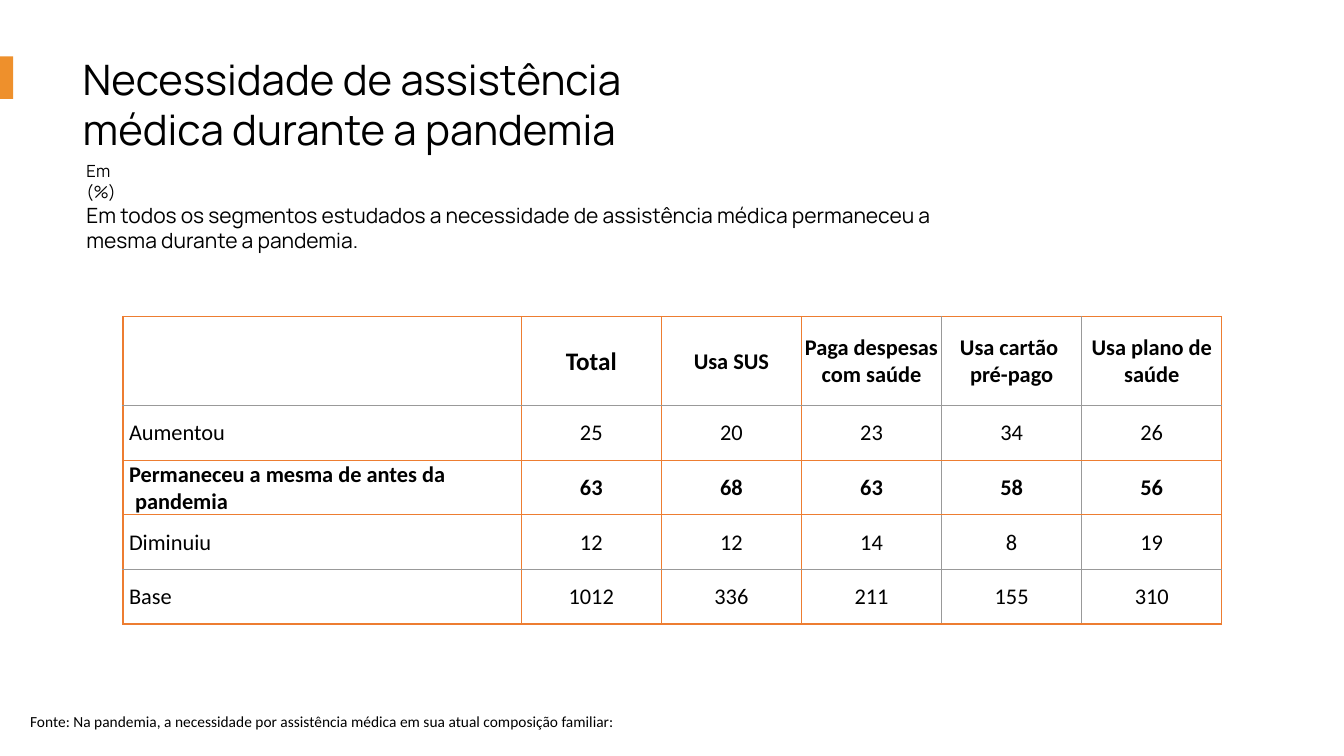
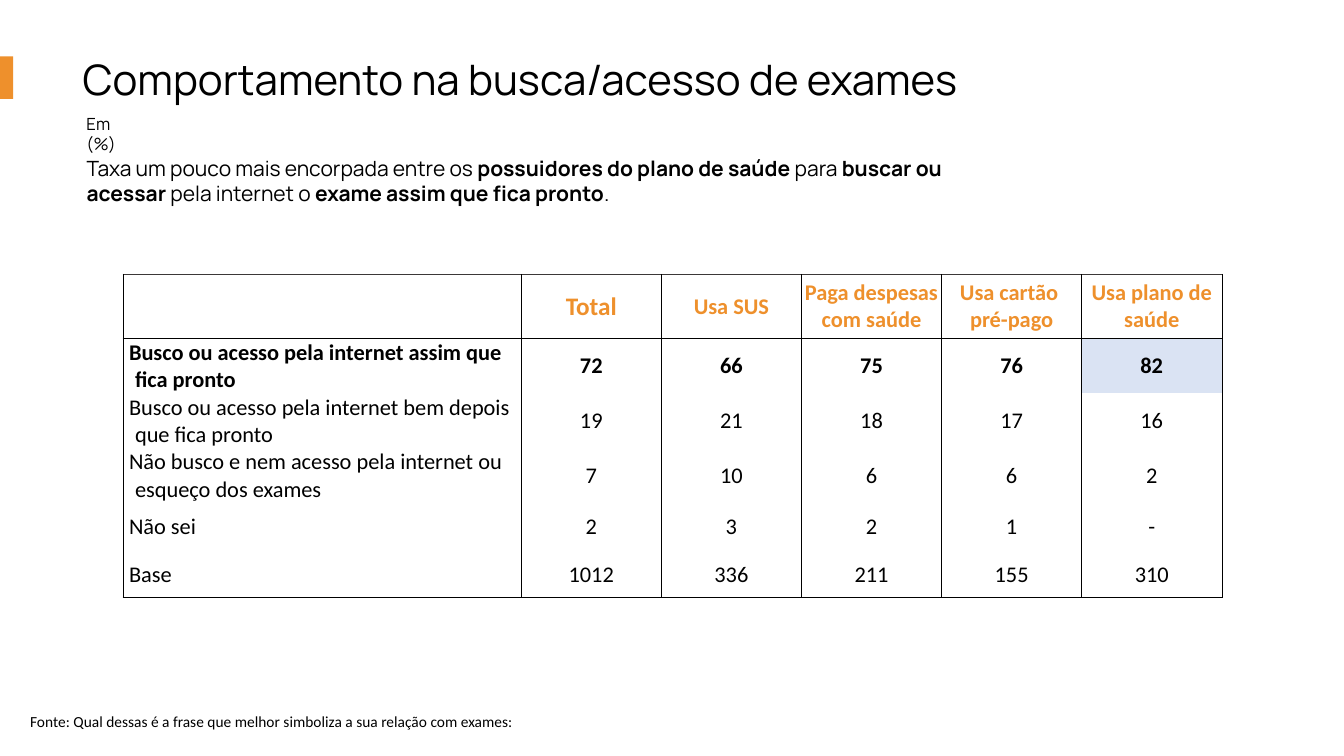
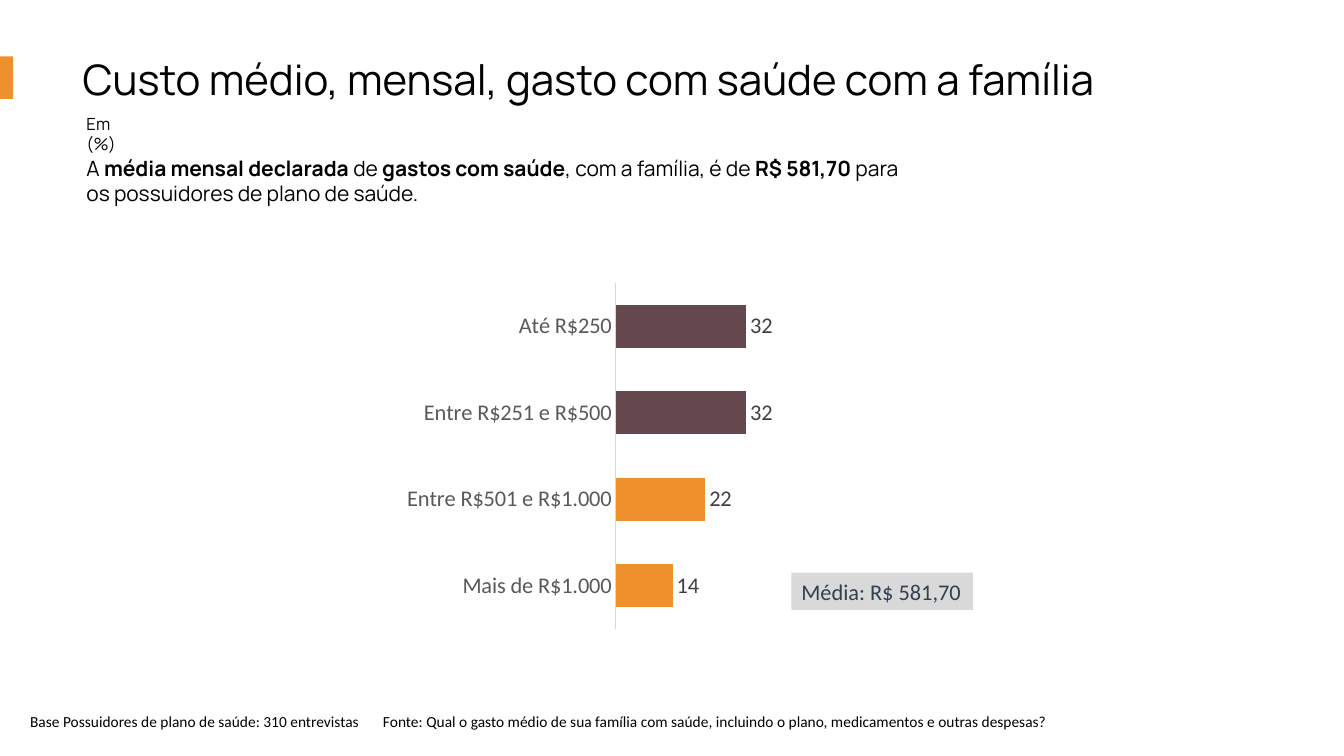
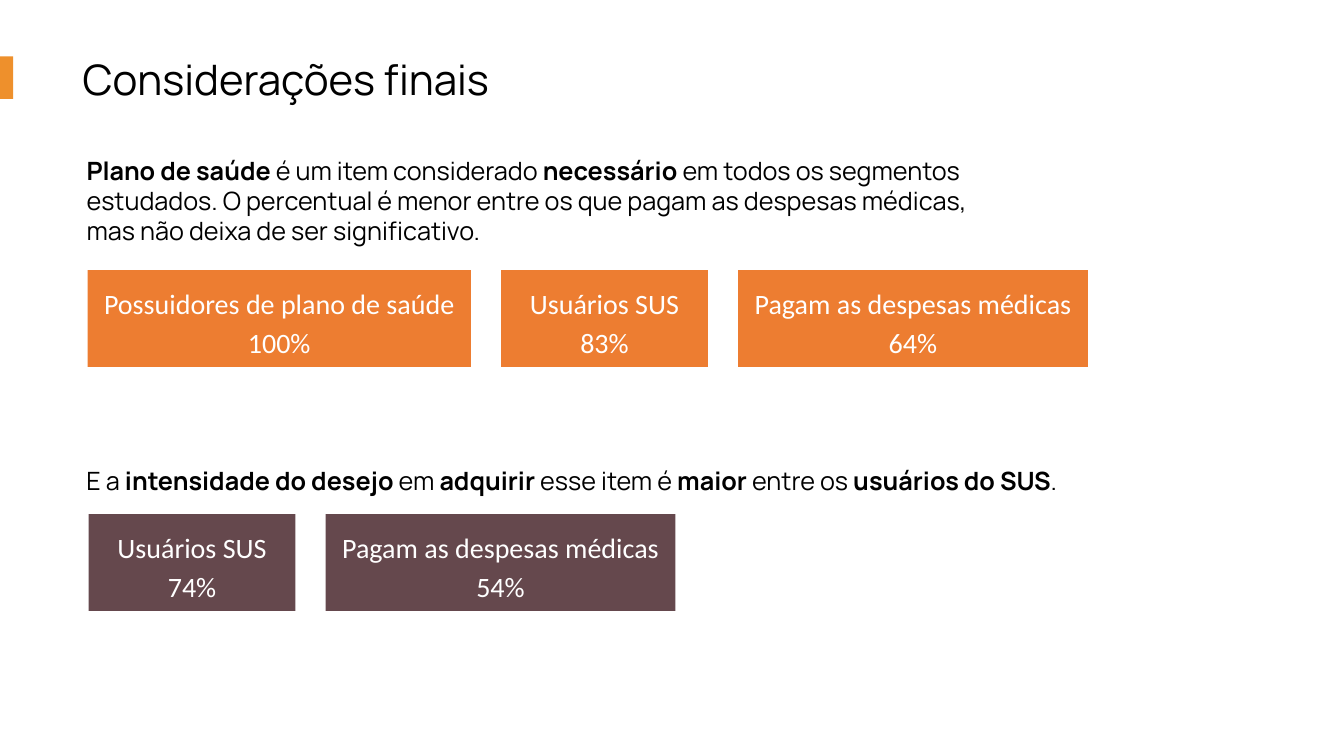
import dataclasses

import lxml.etree
import pptx
import pptx.chart.data
import pptx.dml.color
import pptx.enum.chart
import pptx.enum.shapes
import pptx.enum.text
import pptx.oxml
import pptx.oxml.ns
import pptx.util

WIDTH = pptx.util.Inches(13.33)
HEIGHT = pptx.util.Inches(7.5)
COLORS = {
    "text": "000000",
    "white": "FFFFFF",
    "accent": "EE902C",
    "orange": "ED7D31",
    "plum": "65484D",
    "highlight": "DAE3F3",
    "rule": "999999",
    "edge": "3B3838",
    "badge": "D9D9D9",
    "badge_text": "333F50",
    "axis_text": "595959",
    "label": "404040",
}
HEADING = "Manrope"
BODY = "Calibri"
PLAIN_TABLE = "{2D5ABB26-0587-4C30-8999-92F81FD0307C}"
ALIGN = pptx.enum.text.PP_ALIGN
ANCHOR = pptx.enum.text.MSO_ANCHOR
GROUPS = ["Total", "Usa SUS", "Paga despesas com saúde", "Usa cartão \vpré-pago", "Usa plano de saúde"]
BASE = ["Base", "1012", "336", "211", "155", "310"]


@dataclasses.dataclass
class Box:
    """Percentages of the slide's width and height."""

    left: float
    top: float
    width: float
    height: float

    def emu(self):
        return (
            int(WIDTH * self.left / 100),
            int(HEIGHT * self.top / 100),
            int(WIDTH * self.width / 100),
            int(HEIGHT * self.height / 100),
        )


def color(name):
    return pptx.dml.color.RGBColor.from_string(COLORS[name])


def style(font, size, name=BODY, tint="text", bold=None):
    font.size = pptx.util.Pt(size)
    font.name = name
    font.color.rgb = color(tint)
    font.bold = bold


def write(paragraph, text, size, name=BODY, tint="text", align=ALIGN.LEFT):
    paragraph.alignment = align
    style(paragraph.font, size, name, tint)
    for index, part in enumerate(text.split("**")):
        if part:
            span = paragraph.add_run()
            span.text = part
            if index % 2:
                span.font.bold = True


def add_text(page, box, text, size, name=BODY, spacing=None):
    frame = page.shapes.add_textbox(*box.emu()).text_frame
    frame.word_wrap = True
    paragraph = frame.paragraphs[0]
    write(paragraph, text, size, name)
    if spacing:
        paragraph.line_spacing = spacing
    return paragraph


def add_rectangle(page, box, tint):
    shape = page.shapes.add_shape(pptx.enum.shapes.MSO_SHAPE.RECTANGLE, *box.emu())
    shape.shadow.inherit = False
    shape.fill.solid()
    shape.fill.fore_color.rgb = color(tint)
    shape.line.fill.background()
    return shape


def add_page(deck, title, box):
    page = deck.slides.add_slide(deck.slide_layouts[5])
    heading = page.shapes.title
    heading.left, heading.top, heading.width, heading.height = box.emu()
    frame = heading.text_frame
    frame.auto_size = pptx.enum.text.MSO_AUTO_SIZE.NONE
    frame.word_wrap = True
    frame.vertical_anchor = ANCHOR.TOP
    write(frame.paragraphs[0], title, 30, HEADING)
    add_rectangle(page, Box(0, 7.47, 0.98, 5.6), "accent")
    return page


def add_lead(page, box, text):
    add_text(page, Box(box.left, box.top - 5.47, 5.4, 4), "Em (%)", 12, HEADING)
    add_text(page, box, text, 15, HEADING)


def add_footer(page, text):
    return add_text(page, Box(1.5, 93.6, 95, 4), text, 11)


def set_borders(cell, width, **sides):
    properties = cell._tc.get_or_add_tcPr()
    for side in "LRTB":
        line = lxml.etree.SubElement(properties, pptx.oxml.ns.qn("a:ln" + side))
        line.set("w", str(pptx.util.Pt(width)))
        if sides[side]:
            fill = lxml.etree.SubElement(line, pptx.oxml.ns.qn("a:solidFill"))
            tint = lxml.etree.SubElement(fill, pptx.oxml.ns.qn("a:srgbClr"))
            tint.set("val", COLORS[sides[side]])
        else:
            lxml.etree.SubElement(line, pptx.oxml.ns.qn("a:noFill"))


def fill_cell(cell, text, row, column, head_tint, bold_row):
    cell.vertical_anchor = ANCHOR.MIDDLE
    cell.margin_left = cell.margin_right = cell.margin_top = pptx.util.Inches(0.01)
    cell.margin_bottom = 0
    paragraph = cell.text_frame.paragraphs[0]
    paragraph.text = text
    size = 18 if text == "Total" else 16
    style(paragraph.font, size, BODY, "text" if row else head_tint, row in (0, bold_row))
    if column:
        paragraph.alignment = ALIGN.CENTER
    else:
        properties = paragraph._p.get_or_add_pPr()
        properties.set("marL", str(pptx.util.Inches(0.11)))
        properties.set("indent", str(pptx.util.Inches(-0.06)))


def add_table(page, box, rows, heights, verticals, horizontals, line_width, head_tint, bold_row, marked=None):
    rows = [[""] + GROUPS] + rows + [BASE]
    widths = [3.95] + [1.39] * len(GROUPS)
    left, top, width, height = box.emu()
    table = page.shapes.add_table(len(rows), len(widths), left, top, width, height).table
    table.first_row = table.horz_banding = False
    table._tbl.tblPr.find(pptx.oxml.ns.qn("a:tableStyleId")).text = PLAIN_TABLE
    for column, share in zip(table.columns, widths):
        column.width = int(width * share / sum(widths))
    for row, share in zip(table.rows, heights):
        row.height = int(height * share / sum(heights))
    for r, texts in enumerate(rows):
        for c, text in enumerate(texts):
            cell = table.cell(r, c)
            fill_cell(cell, text, r, c, head_tint, bold_row)
            set_borders(
                cell, line_width,
                L=verticals[c], R=verticals[c + 1], T=horizontals[r], B=horizontals[r + 1],
            )
            if (r, c) == marked:
                cell.fill.solid()
                cell.fill.fore_color.rgb = color("highlight")
            else:
                cell.fill.background()


def set_plot_area(chart, **shares):
    area = chart._chartSpace.chart.plotArea
    for old in area.findall(pptx.oxml.ns.qn("c:layout")):
        area.remove(old)
    layout = lxml.etree.Element(pptx.oxml.ns.qn("c:layout"))
    manual = lxml.etree.SubElement(layout, pptx.oxml.ns.qn("c:manualLayout"))
    settings = {"layoutTarget": "inner", "xMode": "edge", "yMode": "edge", **shares}
    for name, value in settings.items():
        lxml.etree.SubElement(manual, pptx.oxml.ns.qn("c:" + name)).set("val", str(value))
    area.insert(0, layout)


def add_cost_chart(page, box):
    data = pptx.chart.data.CategoryChartData(number_format="####")
    data.categories = ["Até R$250", "Entre R$251 e R$500", "Entre R$501 e R$1.000", "Mais de R$1.000"]
    data.add_series("Series 1", [32, 32, 22, 14])
    kind = pptx.enum.chart.XL_CHART_TYPE.BAR_CLUSTERED
    chart = page.shapes.add_chart(kind, *box.emu(), data).chart
    chart.has_legend = chart.has_title = False
    style(chart.font, 10)
    set_plot_area(chart, x=0.47, y=0.04, w=0.52, h=0.92)

    categories = chart.category_axis
    categories.reverse_order = True
    categories.has_major_gridlines = False
    categories.major_tick_mark = pptx.enum.chart.XL_TICK_MARK.NONE
    categories.format.line.color.rgb = color("badge")
    categories.format.line.width = pptx.util.Pt(0.75)
    style(categories.tick_labels.font, 16, tint="axis_text")

    values = chart.value_axis
    values.minimum_scale, values.maximum_scale = 0, 100
    values.has_major_gridlines = False
    values.visible = False

    plot = chart.plots[0]
    plot.gap_width = 100
    plot.vary_by_categories = False
    series = plot.series[0]
    series.format.fill.solid()
    series.format.fill.fore_color.rgb = color("accent")
    for index in (0, 1):
        fill = series.points[index].format.fill
        fill.solid()
        fill.fore_color.rgb = color("plum")

    plot.has_data_labels = True
    labels = plot.data_labels
    labels.show_value = True
    labels.number_format = "####"
    labels.number_format_is_linked = False
    labels.position = pptx.enum.chart.XL_LABEL_POSITION.OUTSIDE_END
    style(labels.font, 16, tint="label")


def add_badge(page, box, text):
    frame = add_rectangle(page, box, "badge").text_frame
    frame.word_wrap = False
    write(frame.paragraphs[0], text, 16, tint="badge_text")


def add_cards(page, box, tint, cards, gap=2.25):
    unit = (box.width - gap * (len(cards) - 1)) / sum(share for share, _, _ in cards)
    left = box.left
    for share, label, value in cards:
        width = unit * share
        frame = add_rectangle(page, Box(left, box.top, width, box.height), tint).text_frame
        frame.word_wrap = True
        frame.vertical_anchor = ANCHOR.MIDDLE
        frame.margin_top = pptx.util.Inches(0.14)
        write(frame.paragraphs[0], label, 20, tint="white", align=ALIGN.CENTER)
        amount = frame.add_paragraph()
        write(amount, value, 20, tint="white", align=ALIGN.CENTER)
        amount.space_before = pptx.util.Pt(4)
        left += width + gap


def build_need(deck):
    page = add_page(deck, "Necessidade de assistência médica durante a pandemia", Box(5.4, 6.4, 48.24, 14.8))
    add_lead(
        page, Box(5.7, 26.13, 67.44, 8.13),
        "Em todos os segmentos estudados a necessidade de assistência médica permaneceu a mesma durante a pandemia.",
    )
    rows = [
        ["Aumentou", "25", "20", "23", "34", "26"],
        ["Permaneceu a mesma de antes da pandemia", "63", "68", "63", "58", "56"],
        ["Diminuiu", "12", "12", "14", "8", "19"],
    ]
    add_table(
        page, Box(9.15, 41.87, 81.77, 40.67), rows, [0.88] + [0.54] * 4,
        ["orange"] * 4 + ["rule"] * 2 + ["orange"],
        ["orange", "rule", "orange", "orange", "rule", "orange"],
        1, "text", 2,
    )
    add_footer(page, "Fonte: Na pandemia, a necessidade por assistência médica em sua atual composição familiar:")


def build_exams(deck):
    page = add_page(deck, "Comportamento na busca/acesso de exames", Box(5.4, 6.4, 69.54, 8.13))
    add_lead(
        page, Box(5.7, 19.87, 70.74, 8.13),
        "Taxa um pouco mais encorpada entre os **possuidores do plano de saúde **para "
        "**buscar ou acessar **pela internet o **exame assim que fica pronto**.",
    )
    rows = [
        ["Busco ou acesso pela internet assim que fica pronto", "72", "66", "75", "76", "82"],
        ["Busco ou acesso pela internet bem depois que fica pronto", "19", "21", "18", "17", "16"],
        ["Não busco e nem acesso pela internet ou esqueço dos exames", "7", "10", "6", "6", "2"],
        ["Não sei", "2", "3", "2", "1", "-"],
    ]
    add_table(
        page, Box(9.15, 36.27, 81.77, 42.8), rows, [0.63] + [0.54] * 3 + [0.47] * 2,
        ["text"] * 7,
        ["edge", "text"] + [None] * 4 + ["text"],
        0.5, "accent", 1, (1, 5),
    )
    add_footer(page, "Fonte: Qual dessas é a frase que melhor simboliza a sua relação com exames:")


def build_cost(deck):
    page = add_page(deck, "Custo médio, mensal, gasto com saúde com a família", Box(5.4, 6.4, 82.6, 8.13))
    add_lead(
        page, Box(5.7, 19.87, 63.69, 8.13),
        "A **média mensal declarada **de **gastos com saúde**, com a família, é de "
        "**R$ 581,70 **para os possuidores de plano de saúde.",
    )
    add_cost_chart(page, Box(18.38, 35.47, 58.36, 49.73))
    add_badge(page, Box(58.89, 75.73, 13.5, 4.93), "Média: R$ 581,70")
    note = add_footer(
        page,
        "Base Possuidores de plano de saúde: 310 entrevistas\t"
        "Fonte: Qual o gasto médio de sua família com saúde, incluindo o plano, medicamentos e outras despesas?",
    )
    stops = lxml.etree.Element(pptx.oxml.ns.qn("a:tabLst"))
    stop = lxml.etree.SubElement(stops, pptx.oxml.ns.qn("a:tab"))
    stop.set("pos", str(pptx.util.Inches(3.5)))
    stop.set("algn", "l")
    note._p.get_or_add_pPr().insert(0, stops)


def build_closing(deck):
    page = add_page(deck, "Considerações finais", Box(5.4, 6.4, 82.6, 8.13))
    add_text(
        page, Box(5.7, 19.87, 68.34, 13.47),
        "**Plano de saúde **é um item considerado **necessário **em todos os segmentos estudados. "
        "O percentual é menor entre os que pagam as despesas médicas, mas não deixa de ser significativo.",
        18, HEADING,
    )
    add_cards(page, Box(6.53, 35.73, 74.42, 12.8), "orange", [
        (3.8, "Possuidores de plano de saúde", "100%"),
        (2.05, "Usuários SUS", "83%"),
        (3.47, "Pagam as despesas médicas", "64%"),
    ])
    add_text(
        page, Box(5.7, 58.93, 75.77, 6.67),
        "E a **intensidade do desejo **em **adquirir** esse item é **maior **entre os **usuários do SUS**.",
        18, HEADING, 1.5,
    )
    add_cards(page, Box(6.6, 68, 43.66, 12.8), "plum", [
        (2.05, "Usuários SUS", "74%"),
        (3.47, "Pagam as despesas médicas", "54%"),
    ])


def main():
    deck = pptx.Presentation()
    deck.slide_width, deck.slide_height = WIDTH, HEIGHT
    for build in (build_need, build_exams, build_cost, build_closing):
        build(deck)
    deck.save("out.pptx")


if __name__ == "__main__":
    main()
